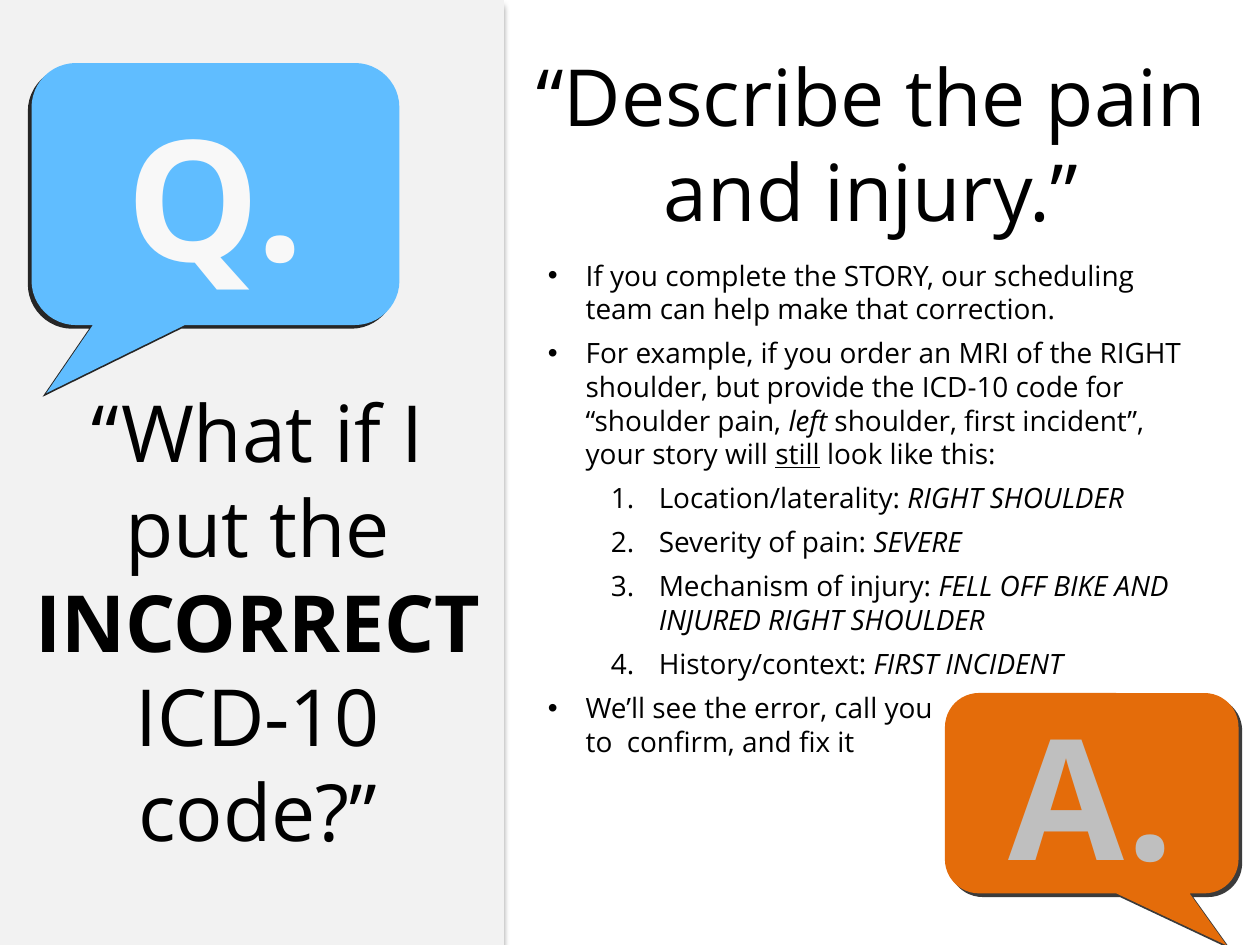
import dataclasses

import lxml.etree
import pptx
import pptx.dml.color
import pptx.enum.shapes
import pptx.enum.text
import pptx.oxml.ns
import pptx.util

Inches = pptx.util.Inches
Pt = pptx.util.Pt
Kind = pptx.enum.shapes.MSO_SHAPE
Align = pptx.enum.text.PP_ALIGN
qn = pptx.oxml.ns.qn

FONT = "Open Sans"
COLORS = {
    "panel": "F2F2F2", "blue": "60BDFF", "orange": "E46C0A",
    "black": "000000", "white": "F8F8F8", "silver": "BFBFBF",
    "gray": "808080", "dark": "262626",
}


@dataclasses.dataclass
class Box:
    left: float
    top: float
    width: float
    height: float

    def size(self) -> tuple:
        return tuple(Inches(n) for n in dataclasses.astuple(self))


@dataclasses.dataclass
class Shade:
    color: str
    alpha: int
    blur: int
    dist: int
    angle: int


@dataclasses.dataclass
class Bubble:
    letter: str
    box: Box
    tail: float
    fill: str
    ink: str
    shade: Shade


@dataclasses.dataclass
class Run:
    text: str
    style: str = ""


@dataclasses.dataclass
class Item:
    runs: list
    step: bool = False


def rgb(name: str):
    return pptx.dml.color.RGBColor.from_string(COLORS[name])


def add_shade(shape, shade: Shade) -> None:
    shape.shadow.inherit = False
    effects = shape._element.spPr.find(qn("a:effectLst"))
    outer = lxml.etree.SubElement(
        effects, qn("a:outerShdw"), blurRad=str(Pt(shade.blur)),
        dist=str(Pt(shade.dist)), dir=str(shade.angle * 60000),
        algn="ctr", rotWithShape="0")
    color = lxml.etree.SubElement(outer, qn("a:srgbClr"), val=COLORS[shade.color])
    lxml.etree.SubElement(color, qn("a:alpha"), val=str(shade.alpha * 1000))


def add_solid(slide, kind, box: Box, fill: str, shade: Shade):
    shape = slide.shapes.add_shape(kind, *box.size())
    shape.fill.solid()
    shape.fill.fore_color.rgb = rgb(fill)
    shape.line.fill.background()
    add_shade(shape, shade)
    return shape


def add_run(para, run: Run, size: int, ink: str = "black"):
    part = para.add_run()
    part.text = run.text
    font = part.font
    font.name, font.size = FONT, Pt(size)
    font.color.rgb = rgb(ink)
    font.bold = run.style == "bold"
    font.italic = run.style == "italic"
    font.underline = run.style == "under"
    return part


def add_bubble(slide, bubble: Bubble) -> None:
    shape = add_solid(slide, Kind.ROUNDED_RECTANGULAR_CALLOUT, bubble.box,
                      bubble.fill, bubble.shade)
    for i, value in enumerate((bubble.tail, 0.76, 0.17)):
        shape.adjustments[i] = value
    frame = shape.text_frame
    frame.vertical_anchor = pptx.enum.text.MSO_ANCHOR.MIDDLE
    para = frame.paragraphs[0]
    para.alignment = Align.CENTER
    part = add_run(para, Run(bubble.letter, "bold"), 96, bubble.ink)
    part.font._element.set("spc", "150")


def add_frame(slide, box: Box):
    frame = slide.shapes.add_textbox(*box.size()).text_frame
    frame.word_wrap = True
    frame.auto_size = pptx.enum.text.MSO_AUTO_SIZE.SHAPE_TO_FIT_TEXT
    return frame


def add_quote(slide, box: Box, runs: list) -> None:
    para = add_frame(slide, box).paragraphs[0]
    para.alignment = Align.CENTER
    for run in runs:
        add_run(para, run, 45)


def set_mark(para, step: bool) -> None:
    """Give a paragraph its hanging indent and its bullet or number."""
    left, hang = (0.88, 0.38) if step else (0.3, 0.3)
    props = para._p.get_or_add_pPr()
    props.set("marL", str(Inches(left)))
    props.set("indent", str(-Inches(hang)))
    if step:
        para.level = 1
        lxml.etree.SubElement(props, qn("a:buFont"), typeface="+mj-lt")
        lxml.etree.SubElement(props, qn("a:buAutoNum"), type="arabicPeriod")
    else:
        lxml.etree.SubElement(props, qn("a:buFont"), typeface="Arial")
        lxml.etree.SubElement(props, qn("a:buChar"), char="•")


def add_list(slide, box: Box, items: list) -> None:
    frame = add_frame(slide, box)
    for i, item in enumerate(items):
        para = frame.add_paragraph() if i else frame.paragraphs[0]
        para.space_after = Pt(6)
        set_mark(para, item.step)
        for run in item.runs:
            for j, line in enumerate(run.text.split("\n")):
                if j:
                    para.add_line_break()
                add_run(para, dataclasses.replace(run, text=line), 16)


BUBBLES = [
    Bubble("Q.", Box(0.25, 0.5, 2.92, 2.08), -0.46, "blue", "white",
           Shade("dark", 100, 0, 3, 135)),
    Bubble("A.", Box(7.5, 5.5, 2.33, 1.59), 0.46, "orange", "silver",
           Shade("dark", 89, 0, 3, 45)),
]
STORY = [
    ("Location/laterality: ", "RIGHT SHOULDER"),
    ("Severity of pain: ", "SEVERE"),
    ("Mechanism of injury: ", "FELL OFF BIKE AND INJURED RIGHT SHOULDER"),
    ("History/context: ", "FIRST INCIDENT"),
]
ITEMS = [
    Item([Run("If you complete the STORY, our scheduling team can help make "
              "that correction.")]),
    Item([Run("For example, if you order an MRI of the RIGHT shoulder, but "
              "provide the ICD-10 code for “shoulder pain, "),
          Run("left", "italic"),
          Run(" shoulder, first incident”, your story will "),
          Run("still", "under"),
          Run(" look like this:")]),
    *(Item([Run(label), Run(value, "italic")], True) for label, value in STORY),
    Item([Run("We’ll see the error, call you \nto  confirm, and fix it")]),
]


def main() -> None:
    deck = pptx.Presentation()
    deck.slide_width, deck.slide_height = Inches(10), Inches(7.5)
    slide = deck.slides.add_slide(deck.slide_layouts[6])
    add_solid(slide, Kind.RECTANGLE, Box(0, 0, 4, 7.5), "panel",
              Shade("gray", 100, 4, 4, 90))
    for bubble in BUBBLES:
        add_bubble(slide, bubble)
    add_quote(slide, Box(0.17, 3, 3.75, 3.89),
              [Run("“What if I put the "), Run("INCORRECT ", "bold"),
               Run("ICD-10 code?”")])
    add_quote(slide, Box(4.08, 0.33, 5.67, 1.62),
              [Run("“Describe the pain and injury.”")])
    add_list(slide, Box(4.25, 2, 5.42, 4.49), ITEMS)
    deck.save("out.pptx")


if __name__ == "__main__":
    main()
